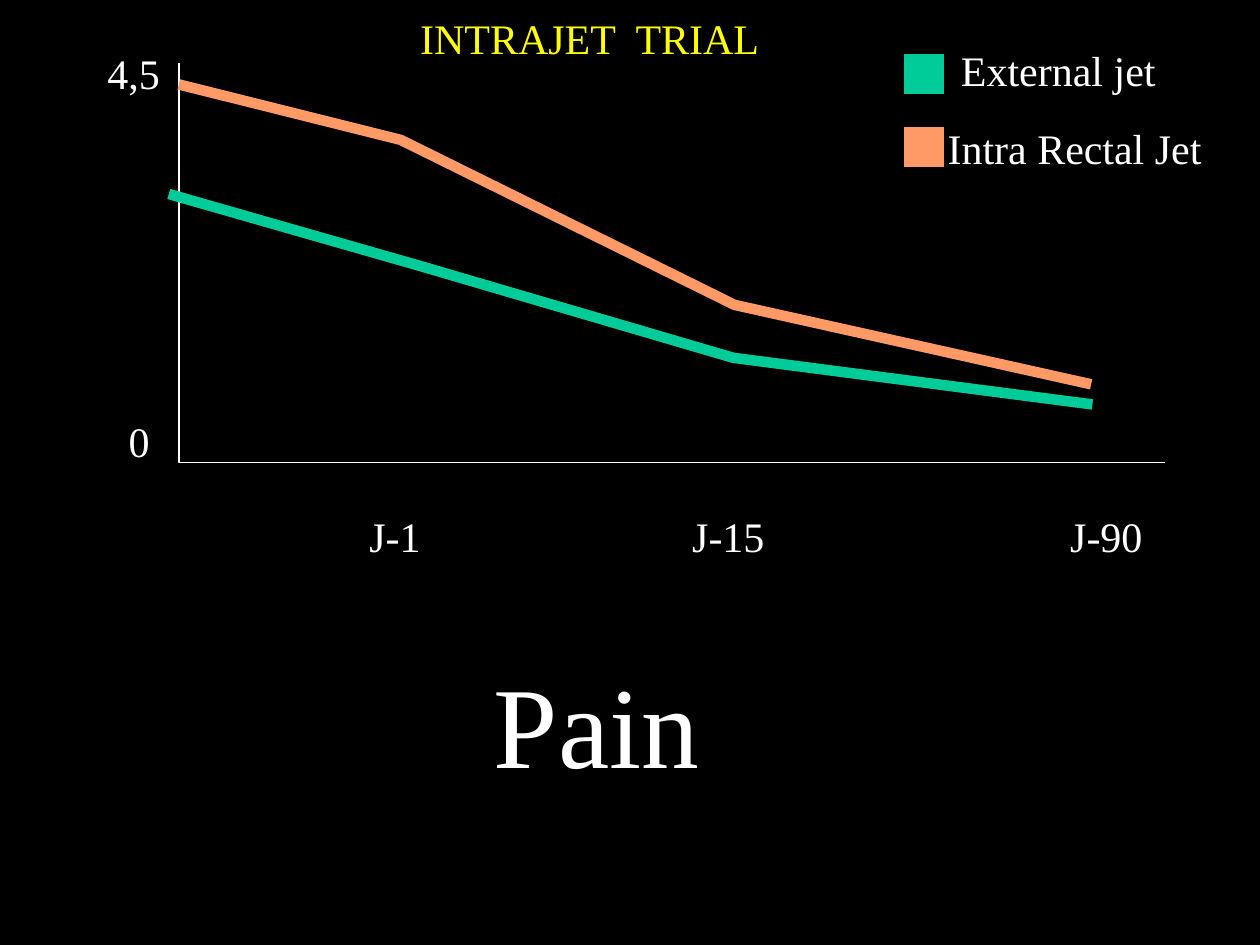
from dataclasses import dataclass

from pptx import Presentation
from pptx.dml.color import RGBColor
from pptx.enum.shapes import MSO_SHAPE
from pptx.enum.text import MSO_AUTO_SIZE, PP_ALIGN
from pptx.util import Inches, Pt

RECTANGLE = MSO_SHAPE.RECTANGLE
CENTER = PP_ALIGN.CENTER
GROW = MSO_AUTO_SIZE.SHAPE_TO_FIT_TEXT
COLUMNS, ROWS = 100, 75
BLANK_LAYOUT = 6


@dataclass(frozen=True)
class Theme:
    font: str = "Times New Roman"
    background: RGBColor = RGBColor(0, 0, 0)
    text: RGBColor = RGBColor(255, 255, 255)
    title: RGBColor = RGBColor(255, 255, 0)
    external: RGBColor = RGBColor(0, 204, 153)
    rectal: RGBColor = RGBColor(255, 153, 102)
    label_size: float = 24
    caption_size: float = 66
    thin: float = 0.75
    thick: float = 6


class SlideBuilder:
    def __init__(self, deck, theme):
        self.theme = theme
        self.column = deck.slide_width / COLUMNS
        self.row = deck.slide_height / ROWS
        self.slide = deck.slides.add_slide(deck.slide_layouts[BLANK_LAYOUT])
        fill = self.slide.background.fill
        fill.solid()
        fill.fore_color.rgb = theme.background

    def place(self, column, row):
        return round(column * self.column), round(row * self.row)

    def text(self, words, column, row, width, height, size=None, color=None, wrap=False):
        box = self.slide.shapes.add_textbox(*self.place(column, row), *self.place(width, height))
        frame = box.text_frame
        frame.word_wrap = wrap
        frame.auto_size = GROW
        para = frame.paragraphs[0]
        para.alignment = CENTER
        span = para.add_run()
        span.text = words
        span.font.name = self.theme.font
        span.font.size = Pt(size or self.theme.label_size)
        span.font.color.rgb = color or self.theme.text

    def polyline(self, points, color, weight):
        start, *others = [self.place(*point) for point in points]
        builder = self.slide.shapes.build_freeform(*start)
        builder.add_line_segments(others, close=False)
        shape = builder.convert_to_shape()
        shape.shadow.inherit = False
        shape.fill.background()
        shape.line.color.rgb = color
        shape.line.width = Pt(weight)

    def swatch(self, column, row, side, color):
        shape = self.slide.shapes.add_shape(
            RECTANGLE, *self.place(column, row), *self.place(side, side))
        shape.shadow.inherit = False
        shape.fill.solid()
        shape.fill.fore_color.rgb = color
        shape.line.color.rgb = self.theme.background
        shape.line.width = Pt(self.theme.thin)


def main():
    deck = Presentation()
    deck.slide_width, deck.slide_height = Inches(10), Inches(7.5)
    theme = Theme()
    page = SlideBuilder(deck, theme)

    page.polyline([(14.2, 5), (14.2, 36.7), (92.5, 36.7)], theme.text, theme.thin)
    for label, column, width in (("J-1", 28.3, 6.1), ("J-15", 53.9, 7.8), ("J-90", 83.9, 7.8)):
        page.text(label, column, 40, width, 5)
    page.text("0", 9.2, 32.5, 3.7, 5)
    page.text("4,5", 7.5, 3.3, 6.2, 5)

    rectal_pain = [(14.2, 6.7), (31.8, 11.1), (58.3, 24.2), (86.6, 30.5)]
    external_pain = [(13.4, 15.4), (33.3, 21.1), (58.2, 28.4), (86.7, 32.1)]
    page.polyline(rectal_pain, theme.rectal, theme.thick)
    page.polyline(external_pain, theme.external, theme.thick)

    page.text("Pain", 38.1, 51.3, 18.5, 12.1, size=theme.caption_size)
    page.swatch(71.7, 4.2, 3.3, theme.external)
    page.swatch(71.7, 10, 3.3, theme.rectal)
    page.text("External jet", 75.2, 3, 17.6, 5.1)
    page.text("Intra Rectal Jet", 71, 9.2, 28.6, 5.1, wrap=True)
    page.text("INTRAJET  TRIAL", 26.7, 0.5, 40.2, 5.1, color=theme.title, wrap=True)

    deck.save("out.pptx")


if __name__ == "__main__":
    main()
